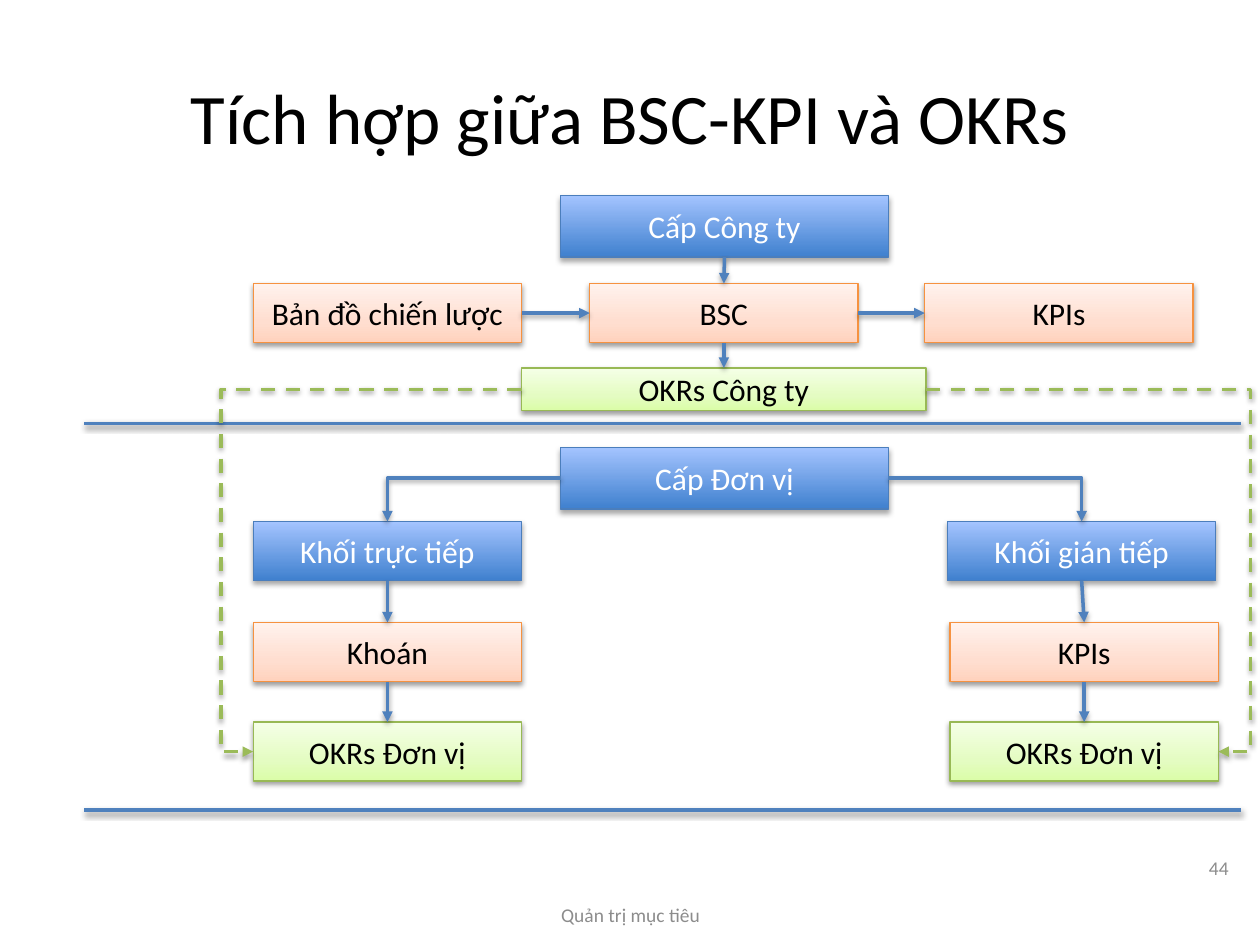
from dataclasses import dataclass

from lxml import etree
from pptx import Presentation
from pptx.dml.color import RGBColor
from pptx.enum.dml import MSO_LINE
from pptx.enum.shapes import MSO_CONNECTOR, MSO_SHAPE
from pptx.enum.text import MSO_ANCHOR, PP_ALIGN
from pptx.oxml.ns import qn
from pptx.util import Inches, Pt

STRAIGHT, ELBOW = MSO_CONNECTOR.STRAIGHT, MSO_CONNECTOR.ELBOW
CENTER, RIGHT_ALIGN = PP_ALIGN.CENTER, PP_ALIGN.RIGHT
MIDDLE = MSO_ANCHOR.MIDDLE
DASH = MSO_LINE.DASH
RECTANGLE = MSO_SHAPE.RECTANGLE
TOP, LEFT, BOTTOM, RIGHT = range(4)  # connection sites of a rectangle

FONT = "Calibri"
COLORS = {"black": "000000", "white": "FFFFFF", "gray": "8C8C8C",
          "flow": "4F81BD", "okr_flow": "9BBB59"}


@dataclass(frozen=True)
class Style:
    stops: tuple  # (percent, colour) from bottom to top
    border: str
    text: str
    shadow_alpha: int = 38
    shadow_distance: float = 1.6


STYLES = {
    "level": Style(((0, "3F80CE"), (100, "A4C4FF")), "4B7EBC", "white", 35, 1.8),
    "tool": Style(((0, "FFD2BD"), (35, "FFDED0"), (100, "FFF2ED")), "F69240", "black"),
    "okr": Style(((0, "DAFDA7"), (35, "E4FCC2"), (100, "F5FFE7")), "98B955", "black"),
}


@dataclass(frozen=True)
class Box:
    label: str
    style: str
    left: float
    top: float
    width: float = 2.13
    height: float = 0.47


@dataclass(frozen=True)
class Link:
    start: str
    start_site: int
    end: str
    end_site: int
    preset: str = ""  # bent preset; empty for a straight arrow
    bend: float = 0.0
    color: str = "flow"
    dashed: bool = False


# Columns and rows of the diagram
LEFT_COL, RIGHT_COL = 2.01, 7.54
COMPANY_ROW, UNIT_ROWS = 2.25, (4.14, 4.94, 5.73)

BOXES = {
    "company": Box("Cấp Công ty", "level", 4.45, 1.55, 2.6, 0.49),
    "map": Box("Bản đồ chiến lược", "tool", LEFT_COL, COMPANY_ROW),
    "bsc": Box("BSC", "tool", 4.68, COMPANY_ROW),
    "kpis": Box("KPIs", "tool", 7.34, COMPANY_ROW),
    "company_okrs": Box("OKRs Công ty", "okr", 4.14, 2.92, 3.21, 0.34),
    "unit": Box("Cấp Đơn vị", "level", 4.45, 3.55, 2.6, 0.49),
    "direct": Box("Khối trực tiếp", "level", LEFT_COL, UNIT_ROWS[0]),
    "contract": Box("Khoán", "tool", LEFT_COL, UNIT_ROWS[1]),
    "direct_okrs": Box("OKRs Đơn vị", "okr", LEFT_COL, UNIT_ROWS[2]),
    "indirect": Box("Khối gián tiếp", "level", 7.52, UNIT_ROWS[0]),
    "unit_kpis": Box("KPIs", "tool", RIGHT_COL, UNIT_ROWS[1]),
    "indirect_okrs": Box("OKRs Đơn vị", "okr", RIGHT_COL, UNIT_ROWS[2]),
}

LINKS = (
    Link("company", BOTTOM, "bsc", TOP),
    Link("map", RIGHT, "bsc", LEFT),
    Link("bsc", RIGHT, "kpis", LEFT),
    Link("bsc", BOTTOM, "company_okrs", TOP),
    Link("unit", LEFT, "direct", TOP, "bentConnector2"),
    Link("unit", RIGHT, "indirect", TOP, "bentConnector2"),
    Link("direct", BOTTOM, "contract", TOP),
    Link("contract", BOTTOM, "direct_okrs", TOP),
    Link("indirect", BOTTOM, "unit_kpis", TOP),
    Link("unit_kpis", BOTTOM, "indirect_okrs", TOP),
    Link("company_okrs", LEFT, "direct_okrs", LEFT,
         "bentConnector3", 1.12, "okr_flow", True),
    Link("company_okrs", RIGHT, "indirect_okrs", RIGHT,
         "bentConnector3", 1.11, "okr_flow", True),
)


def rgb(color: str) -> RGBColor:
    return RGBColor.from_string(COLORS.get(color, color))


def add_shadow(shape, alpha: int = 38, distance: float = 1.6) -> None:
    properties = shape._element.spPr
    effects = properties.find(qn("a:effectLst"))
    if effects is None:
        effects = etree.SubElement(properties, qn("a:effectLst"))
    shadow = etree.SubElement(
        effects, qn("a:outerShdw"), blurRad=str(Pt(3.1)),
        dist=str(Pt(distance)), dir="5400000", rotWithShape="0")
    color = etree.SubElement(shadow, qn("a:srgbClr"), val=COLORS["black"])
    etree.SubElement(color, qn("a:alpha"), val=str(alpha * 1000))


def write(shape, text: str, size: float, color: str, align=CENTER) -> None:
    frame = shape.text_frame
    frame.word_wrap = True
    frame.vertical_anchor = MIDDLE
    paragraph = frame.paragraphs[0]
    paragraph.text = text
    paragraph.alignment = align
    paragraph.font.name = FONT
    paragraph.font.size = Pt(size)
    paragraph.font.color.rgb = rgb(color)


def add_text(slide, text: str, left: float, top: float, width: float,
             height: float, size: float, color: str, align=CENTER) -> None:
    area = slide.shapes.add_textbox(
        Inches(left), Inches(top), Inches(width), Inches(height))
    write(area, text, size, color, align)


def add_box(slide, box: Box):
    style = STYLES[box.style]
    shape = slide.shapes.add_shape(
        RECTANGLE, Inches(box.left), Inches(box.top),
        Inches(box.width), Inches(box.height))
    shape.fill.gradient()
    shape.fill.gradient_angle = 90
    stops = shape._element.spPr.find(qn("a:gradFill")).find(qn("a:gsLst"))
    for default_stop in list(stops):
        stops.remove(default_stop)
    for percent, color in style.stops:
        stop = etree.SubElement(stops, qn("a:gs"), pos=str(percent * 1000))
        etree.SubElement(stop, qn("a:srgbClr"), val=color)
    shape.line.color.rgb = rgb(style.border)
    shape.line.width = Pt(0.75)
    shape.shadow.inherit = False
    add_shadow(shape, style.shadow_alpha, style.shadow_distance)
    write(shape, box.label, 18, style.text)
    return shape


def style_line(connector, color: str) -> None:
    connector.line.color.rgb = rgb(color)
    connector.line.width = Pt(2)
    add_shadow(connector)


def add_divider(slide, top: float) -> None:
    divider = slide.shapes.add_connector(
        STRAIGHT, Inches(0.67), Inches(top), Inches(9.85), Inches(top))
    style_line(divider, "flow")


def add_link(slide, link: Link, shapes: dict) -> None:
    arrow = slide.shapes.add_connector(ELBOW if link.preset else STRAIGHT, 0, 0, 0, 0)
    arrow.begin_connect(shapes[link.start], link.start_site)
    arrow.end_connect(shapes[link.end], link.end_site)
    style_line(arrow, link.color)
    if link.dashed:
        arrow.line.dash_style = DASH
    etree.SubElement(arrow.line._get_or_add_ln(), qn("a:tailEnd"), type="triangle")
    if link.preset:
        geometry = arrow._element.spPr.find(qn("a:prstGeom"))
        geometry.set("prst", link.preset)
        if link.bend:
            guides = geometry.find(qn("a:avLst"))
            etree.SubElement(guides, qn("a:gd"), name="adj1",
                             fmla=f"val {round(link.bend * 100000)}")


def main() -> None:
    prs = Presentation()
    prs.slide_width, prs.slide_height = Inches(10), Inches(7.5)
    slide = prs.slides.add_slide(prs.slide_layouts[6])

    # Title, footer and page number
    add_text(slide, "Tích hợp giữa BSC-KPI và OKRs", 0.5, 0.3, 9, 1.25, 40.6, "black")
    add_text(slide, "Quản trị mục tiêu", 3.42, 7.06, 3.17, 0.4, 11.1, "gray")
    add_text(slide, "44", 7.52, 6.69, 2.33, 0.4, 11.1, "gray", RIGHT_ALIGN)

    # Lines below the company and unit levels
    for top in (3.36, 6.43):
        add_divider(slide, top)

    # Boxes and the arrows between them
    shapes = {key: add_box(slide, box) for key, box in BOXES.items()}
    for link in LINKS:
        add_link(slide, link, shapes)

    prs.save("out.pptx")


if __name__ == "__main__":
    main()
